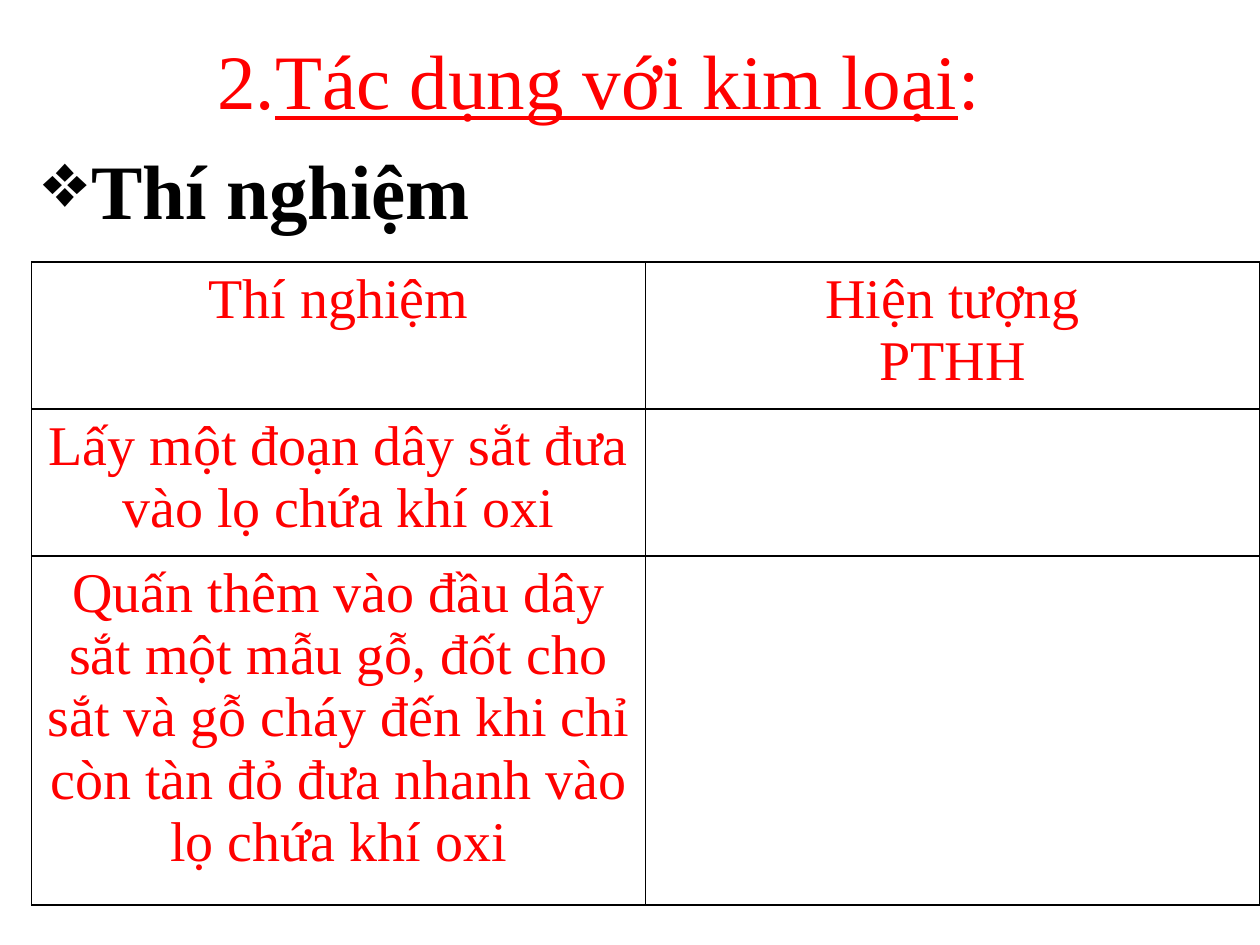
from lxml.etree import SubElement
from pptx import Presentation
from pptx.dml.color import RGBColor
from pptx.enum.text import MSO_ANCHOR, PP_ALIGN
from pptx.oxml.ns import qn
from pptx.util import Inches, Pt

COLORS = {"red": "FF0000", "black": "000000", "white": "FFFFFF"}
FONT = "Times New Roman"
ROWS = [
    ("Thí nghiệm", "Hiện tượng\nPTHH"),
    ("Lấy một đoạn dây sắt đưa vào lọ chứa khí oxi", ""),
    ("Quấn thêm vào đầu dây sắt một mẫu gỗ, đốt cho sắt và gỗ cháy đến khi chỉ "
     "còn tàn đỏ đưa nhanh vào lọ chứa khí oxi", ""),
]
ROW_HEIGHTS = (1.09, 1.09, 2.57)


def rgb(name):
    return RGBColor.from_string(COLORS[name])


def style(paragraph, size, color, bold=False):
    font = paragraph.font
    font.name, font.size, font.bold = FONT, Pt(size), bold
    font.color.rgb = rgb(color)


def add_text_area(slide, left, top, width, height):
    area = slide.shapes.add_textbox(
        Inches(left), Inches(top), Inches(width), Inches(height))
    area.fill.solid()
    area.fill.fore_color.rgb = rgb("white")
    area.text_frame.word_wrap = True
    return area.text_frame


def add_title(slide, left, top, width, height):
    frame = add_text_area(slide, left, top, width, height)
    frame.vertical_anchor = MSO_ANCHOR.MIDDLE
    title = frame.paragraphs[0]
    title.alignment = PP_ALIGN.CENTER
    style(title, 44, "red")
    for text, underlined in (("2.", False), ("Tác dụng với kim loại", True), (":", False)):
        run = title.add_run()
        run.text = text
        run.font.underline = underlined


def add_heading(slide, left, top, width, height):
    heading = add_text_area(slide, left, top, width, height).paragraphs[0]
    heading.text = "Thí nghiệm"
    heading.space_before = Pt(8.8)
    style(heading, 44, "black", bold=True)
    # Hanging diamond bullet
    props = heading._p.get_or_add_pPr()
    props.set("marL", str(Inches(0.38)))
    props.set("indent", str(-Inches(0.38)))
    bullet = SubElement(props, qn("a:buChar"), char="❖")
    props.remove(bullet)
    props.find(qn("a:defRPr")).addprevious(bullet)


def add_borders(cell):
    props = cell._tc.get_or_add_tcPr()
    for index, side in enumerate(("lnL", "lnR", "lnT", "lnB")):
        line = SubElement(props, qn(f"a:{side}"), w=str(Pt(1)))
        fill = SubElement(line, qn("a:solidFill"))
        SubElement(fill, qn("a:srgbClr"), val=COLORS["black"])
        props.insert(index, line)


def add_experiment_table(slide, left, top, width):
    table = slide.shapes.add_table(
        len(ROWS), 2, Inches(left), Inches(top), Inches(width),
        Inches(sum(ROW_HEIGHTS))).table
    table.first_row = table.horz_banding = False
    for row, height, texts in zip(table.rows, ROW_HEIGHTS, ROWS):
        row.height = Inches(height)
        for cell, text in zip(row.cells, texts):
            cell.fill.background()
            add_borders(cell)
            cell.text = text
            for paragraph in cell.text_frame.paragraphs:
                paragraph.alignment = PP_ALIGN.CENTER
                style(paragraph, 32, "red")


def main():
    deck = Presentation()
    deck.slide_width, deck.slide_height = Inches(10), Inches(7.5)
    slide = deck.slides.add_slide(deck.slide_layouts[6])
    add_title(slide, 0.25, 0, 9, 1.25)
    add_heading(slide, 0.25, 1.08, 9, 4.95)
    add_experiment_table(slide, 0.25, 2.08, 9.75)
    deck.save("out.pptx")


if __name__ == "__main__":
    main()
